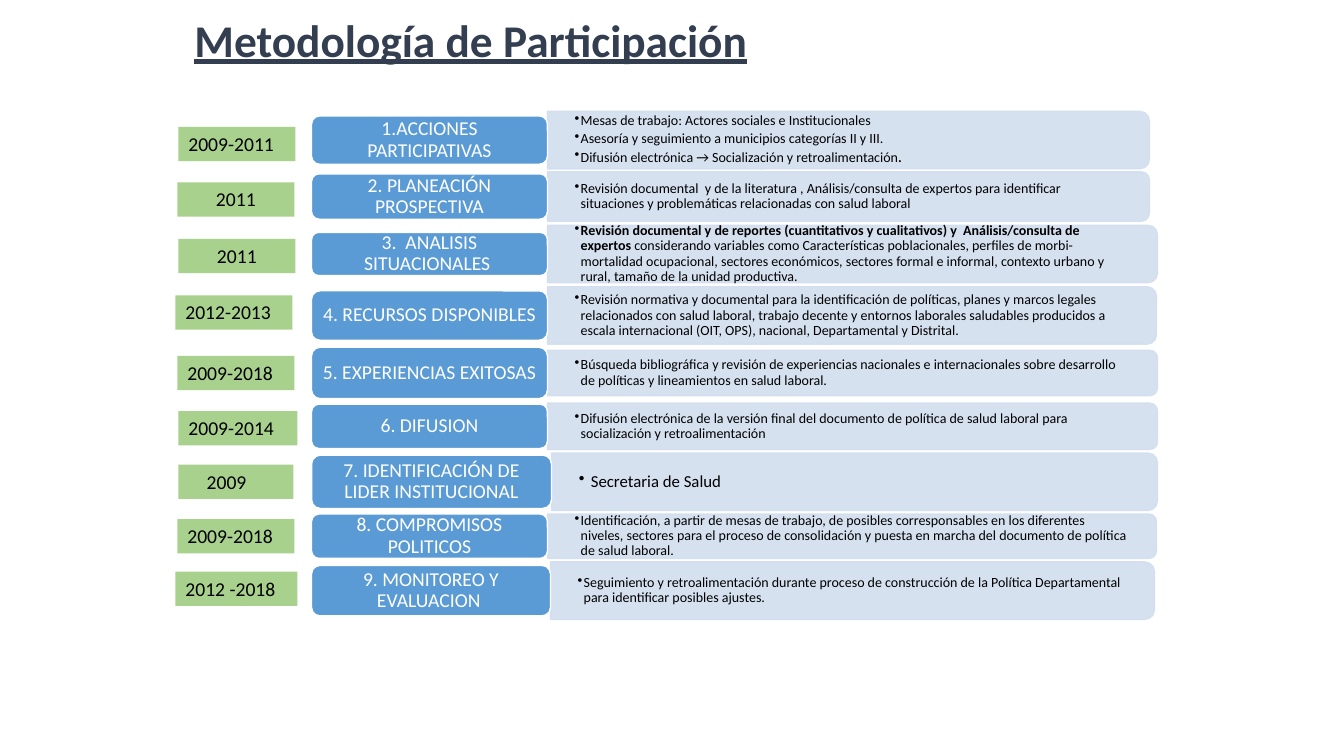
from lxml import etree
from pptx import Presentation
from pptx import util as u
from pptx.dml.color import RGBColor
from pptx.enum import shapes, text
from pptx.oxml import ns

WIDE, HIGH = 13.33, 7.5
NAVY = RGBColor(0x33, 0x3F, 0x50)
BLUE = RGBColor(0x5B, 0x9B, 0xD5)
PALE = RGBColor(0xD2, 0xDE, 0xEF)
GREEN = RGBColor(0xA9, 0xD1, 0x8E)
WHITE = RGBColor(0xFF, 0xFF, 0xFF)
BLACK = RGBColor(0, 0, 0)
LEFT, MID = text.PP_ALIGN.LEFT, text.PP_ALIGN.CENTER
KIND = shapes.MSO_SHAPE

STEPS = [
    dict(mid=1.39, high=0.57, wide=5.97, head=("1.ACCIONES PARTICIPATIVAS", 2.34, 0.48),
         year=("2009-2011", 0.03, 1.16, 0.04),
         body=[["Mesas de trabajo: Actores sociales e Institucionales"],
               ["Asesoría y seguimiento a municipios categorías II y III."],
               ["Difusión electrónica → Socialización y retroalimentación", (".", 12, False)]]),
    dict(mid=1.95, high=0.49, wide=5.97, head=("2. PLANEACIÓN PROSPECTIVA", 2.34, 0.45),
         year=("2011", 0.02, 1.16, 0.03), align=MID,
         body=[["Revisión documental  y de la literatura , Análisis/consulta de expertos para "
                "identificar situaciones y problemáticas relacionadas con salud laboral"]]),
    dict(mid=2.52, high=0.57, wide=6.05, head=("3.  ANALISIS SITUACIONALES ", 2.34, 0.43),
         year=("2011", 0.03, 1.16, 0.02), align=MID,
         body=[[("Revisión documental y de reportes (cuantitativos y cualitativos) y  "
                 "Análisis/consulta de expertos", 10, True),
                " considerando variables como Características poblacionales, perfiles de "
                "morbi-mortalidad ocupacional, sectores económicos, sectores formal e informal, "
                "contexto urbano y rural, tamaño de la unidad productiva."]]),
    dict(mid=3.13, high=0.57, wide=6.04, head=("4. RECURSOS DISPONIBLES ", 2.34, 0.49),
         year=("2012-2013", 0, 1.16, -0.03),
         body=[["Revisión normativa y documental para la identificación de políticas, planes y "
                "marcos legales relacionados con salud laboral, trabajo decente y entornos "
                "laborales saludables producidos a escala internacional (OIT, OPS), nacional, "
                "Departamental y Distrital."]]),
    dict(mid=3.7, high=0.45, wide=6.05, head=("5. EXPERIENCIAS EXITOSAS", 2.34, 0.51),
         year=("2009-2018", 0.02, 1.16, 0),
         body=[["Búsqueda bibliográfica y revisión de experiencias nacionales e internacionales "
                "sobre desarrollo de políticas y lineamientos en salud laboral."]]),
    dict(mid=4.23, high=0.46, wide=6.05, head=("6. DIFUSION", 2.34, 0.44),
         year=("2009-2014", 0.03, 1.18, 0.02),
         body=[["Difusión electrónica de la versión final del documento de política de salud "
                "laboral para socialización y retroalimentación"]]),
    dict(mid=4.78, high=0.57, wide=6.01, head=("7. IDENTIFICACIÓN DE LIDER INSTITUCIONAL", 2.38, 0.53),
         year=("2009", 0.03, 1.14, 0), pad=0.28, size=12, hang=0.12,
         body=[["Secretaria de Salud"]]),
    dict(mid=5.32, high=0.44, wide=6.04, head=("8. COMPROMISOS POLITICOS", 2.34, 0.44),
         year=("2009-2018", 0.02, 1.16, 0),
         body=[["Identificación, a partir de mesas de trabajo, de posibles corresponsables en los "
                "diferentes niveles, sectores para el proceso de consolidación y puesta en marcha "
                "del documento de política de salud laboral."]]),
    dict(mid=5.86, high=0.57, wide=5.99, head=("9. MONITOREO Y EVALUACION ", 2.37, 0.5),
         year=("2012 -2018", 0, 1.21, -0.02),
         body=[["Seguimiento y retroalimentación durante proceso de construcción de la Política "
                "Departamental para identificar posibles ajustes."]]),
]


def grid(left, mid, wide, high):
    """Return the box, in one-inch cells, that is centred on the row line mid."""
    return [u.Inches(n) for n in (left, mid - high / 2, wide, high)]


def write(shape, paras, size=10, color=BLACK, align=LEFT, bold=False, under=False,
          inset=(0.1, 0.05, 0.1, 0.05), anchor=text.MSO_ANCHOR.MIDDLE,
          space=0.9, after=0, hang=0):
    """Fill a shape with paragraphs made of runs."""
    frame = shape.text_frame
    frame.word_wrap = True
    frame.vertical_anchor = anchor
    (frame.margin_left, frame.margin_top,
     frame.margin_right, frame.margin_bottom) = [u.Inches(n) for n in inset]
    for i, runs in enumerate(paras):
        para = frame.add_paragraph() if i else frame.paragraphs[0]
        if hang:
            props = para._p.get_or_add_pPr()
            props.set("marL", str(u.Inches(hang)))
            props.set("indent", str(-u.Inches(hang)))
            etree.SubElement(props, ns.qn("a:buChar")).set("char", "•")
        para.alignment = align
        para.line_spacing = space
        para.space_after = u.Pt(after)
        for part in runs:
            words, points, heavy = (part, size, bold) if isinstance(part, str) else part
            run = para.add_run()
            run.text = words
            font = run.font
            font.name, font.size, font.bold = "Calibri", u.Pt(points), heavy
            font.underline = under
            font.color.rgb = color


def block(slide, kind, box, fill, line=None, alpha=None):
    """Draw a flat preset shape."""
    shape = slide.shapes.add_shape(kind, *box)
    shape.shadow.inherit = False
    shape.fill.solid()
    shape.fill.fore_color.rgb = fill
    if line is None:
        shape.line.fill.background()
    else:
        shape.line.color.rgb = line
        shape.line.width = u.Pt(1)
    if alpha:
        for tint in shape._element.spPr.iter(ns.qn("a:srgbClr")):
            etree.SubElement(tint, ns.qn("a:alpha")).set("val", str(alpha * 1000))
    return shape


def title(slide, left, mid, wide, high):
    """Place the underlined heading."""
    box = slide.shapes.add_textbox(*grid(left, mid, wide, high))
    write(box, [["Metodología de Participación"]], size=32.4, color=NAVY, bold=True, under=True)


def panel(slide, left, mid, wide, high, step):
    """Place the pale panel and its bulleted text."""
    turned = grid(left + (wide - high) / 2, mid, high, wide)
    shape = block(slide, KIND.ROUND_2_SAME_RECTANGLE, turned, PALE, PALE, 90)
    shape.rotation = 90
    box = slide.shapes.add_textbox(*grid(left, mid, wide - 0.03, high - 0.05))
    write(box, step["body"], size=step.get("size", 10), after=1.5,
          hang=step.get("hang", 0.06), inset=(0.27, 0.14, 0.27, 0.14))


def stage(slide, left, step):
    """Place one row: panel, numbered heading and years."""
    mid = step["mid"]
    name, wide, high = step["head"]
    start = left + 1.35
    panel(slide, start + wide, mid, step["wide"], step["high"], step)
    head = block(slide, KIND.ROUNDED_RECTANGLE, grid(start, mid, wide, high), BLUE, WHITE)
    write(head, [[name]], size=14, color=WHITE, align=MID, after=4.9,
          inset=(0.08, 0.05, 0.08, 0.05))
    label, shift, span, drop = step["year"]
    year = block(slide, KIND.RECTANGLE, grid(left + shift, mid + drop, span, 0.34), GREEN)
    write(year, [[label]], size=14, align=step.get("align", LEFT), space=1.0,
          inset=(step.get("pad", 0.1), 0.05, 0.1, 0.05), anchor=text.MSO_ANCHOR.TOP)


def main():
    """Build and save the slide."""
    deck = Presentation()
    deck.slide_width, deck.slide_height = u.Inches(WIDE), u.Inches(HIGH)
    slide = deck.slides.add_slide(deck.slide_layouts[6])
    title(slide, 1.83, 0.42, 8.84, 0.49)
    for step in STEPS:
        stage(slide, 1.74, step)
    deck.save("out.pptx")


if __name__ == "__main__":
    main()
